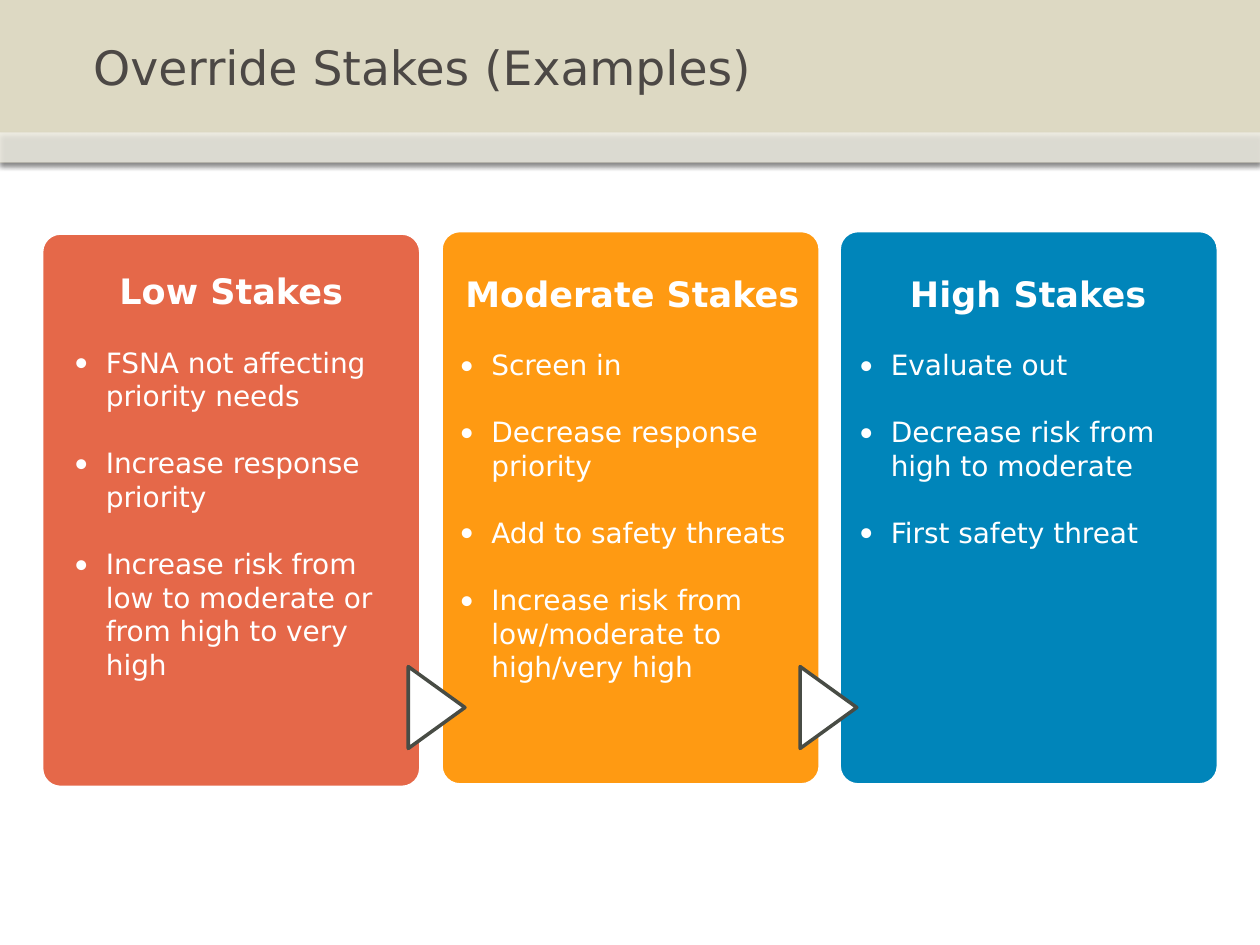
from lxml import etree
from pptx import Presentation
from pptx.dml.color import RGBColor
from pptx.enum.shapes import MSO_SHAPE
from pptx.enum.text import MSO_ANCHOR, PP_ALIGN
from pptx.oxml.ns import qn
from pptx.util import Inches, Pt

RECTANGLE = MSO_SHAPE.RECTANGLE
ROUNDED = MSO_SHAPE.ROUNDED_RECTANGLE
TRIANGLE = MSO_SHAPE.FLOWCHART_EXTRACT
MIDDLE = MSO_ANCHOR.MIDDLE
TOP = MSO_ANCHOR.TOP
CENTER = PP_ALIGN.CENTER

FONT = "DejaVu Sans"
WHITE = "FFFFFF"
PANEL_WIDTH, PANEL_HEIGHT = 3.01, 4.4
BODY_LINE = Pt(19.2)

STAKES = [
    ("Low Stakes", "E56849", (0.33, 1.85), (0.59, 2.08, 2.49, 4.09), None,
     ["FSNA not affecting priority needs",
      "Increase response priority",
      "Increase risk from low to moderate or from high to very high"]),
    ("Moderate Stakes", "FF9A12", (3.5, 1.83), (3.65, 2.1, 2.74, 4.12), 3.14,
     ["Screen in",
      "Decrease response priority",
      "Add to safety threats",
      "Increase risk from low/moderate to high/very high"]),
    ("High Stakes", "0085BA", (6.66, 1.83), (6.82, 2.1, 2.68, 4.23), 6.25,
     ["Evaluate out",
      "Decrease risk from high to moderate",
      "First safety threat"]),
]


def color(hex_value):
    return RGBColor.from_string(hex_value)


def add_child(parent, tag, **attributes):
    child = etree.SubElement(parent, qn(tag))
    for key, value in attributes.items():
        child.set(key, str(value))
    return child


def add_block(slide, preset, box, fill, outline=None):
    block = slide.shapes.add_shape(preset, *map(Inches, box))
    block.shadow.inherit = False
    block.fill.solid()
    block.fill.fore_color.rgb = color(fill)
    if outline:
        block.line.color.rgb = color(outline)
        block.line.width = Pt(2)
    else:
        block.line.fill.background()
    return block


def add_band(slide, box, fill, opacity=100):
    band = add_block(slide, RECTANGLE, box, fill)
    properties = band._element.spPr
    fill_color = properties.find(qn("a:solidFill"))[0]
    add_child(fill_color, "a:alpha", val=opacity * 1000)
    shadow = add_child(properties.find(qn("a:effectLst")), "a:outerShdw",
                       blurRad=Pt(3.1), dist=Pt(1.8), dir=5400000, rotWithShape=0)
    shadow_color = add_child(shadow, "a:srgbClr", val="000000")
    add_child(shadow_color, "a:alpha", val=35000)


def add_text_frame(slide, box, left_margin, top_margin, anchor):
    frame = slide.shapes.add_textbox(*map(Inches, box)).text_frame
    frame.word_wrap = True
    frame.vertical_anchor = anchor
    frame.margin_left = Inches(left_margin)
    frame.margin_top = Inches(top_margin)
    frame.margin_right = frame.margin_bottom = 0
    return frame


def add_run(paragraph, text, size, font_color, bold=False):
    run = paragraph.add_run()
    run.text = text
    run.font.name = FONT
    run.font.size = Pt(size)
    run.font.bold = bold
    run.font.color.rgb = color(font_color)


def add_bullet(frame, text):
    paragraph = frame.add_paragraph()
    paragraph.line_spacing = BODY_LINE
    paragraph.space_before = BODY_LINE
    properties = paragraph._p.get_or_add_pPr()
    properties.set("marL", str(Inches(0.25)))
    properties.set("indent", str(-Inches(0.25)))
    add_child(properties, "a:buFont", typeface="Calibri")
    add_child(properties, "a:buChar", char="•")
    add_run(paragraph, text, 16, WHITE)


def add_title(slide, text):
    frame = add_text_frame(slide, (0.5, 0, 9, 1.05), 0.24, 0, MIDDLE)
    add_run(frame.paragraphs[0], text, 27, "4C4845")


def add_panel(slide, corner, fill):
    panel = add_block(slide, ROUNDED, (*corner, PANEL_WIDTH, PANEL_HEIGHT), fill, WHITE)
    panel.adjustments[0] = 0.05


def add_pointer(slide, left):
    pointer = add_block(slide, TRIANGLE, (left, 5.39, 0.65, 0.45), WHITE, "484C45")
    pointer.rotation = 90


def add_stakes_text(slide, box, heading, examples):
    frame = add_text_frame(slide, box, 0, 0.06, TOP)
    heading_line = frame.paragraphs[0]
    heading_line.alignment = CENTER
    add_run(heading_line, heading, 20, WHITE, bold=True)
    for example in examples:
        add_bullet(frame, example)


def main():
    deck = Presentation()
    deck.slide_width, deck.slide_height = Inches(10), Inches(7.5)
    slide = deck.slides.add_slide(deck.slide_layouts[6])
    add_band(slide, (0, 0, 10, 1.29), "DDD9C3")
    add_band(slide, (0, 1.05, 10, 0.24), WHITE, opacity=53)
    add_title(slide, "Override Stakes (Examples)")
    for heading, fill, corner, text_box, pointer_left, examples in STAKES:
        add_panel(slide, corner, fill)
        if pointer_left is not None:
            add_pointer(slide, pointer_left)
        add_stakes_text(slide, text_box, heading, examples)
    deck.save("out.pptx")


if __name__ == "__main__":
    main()
